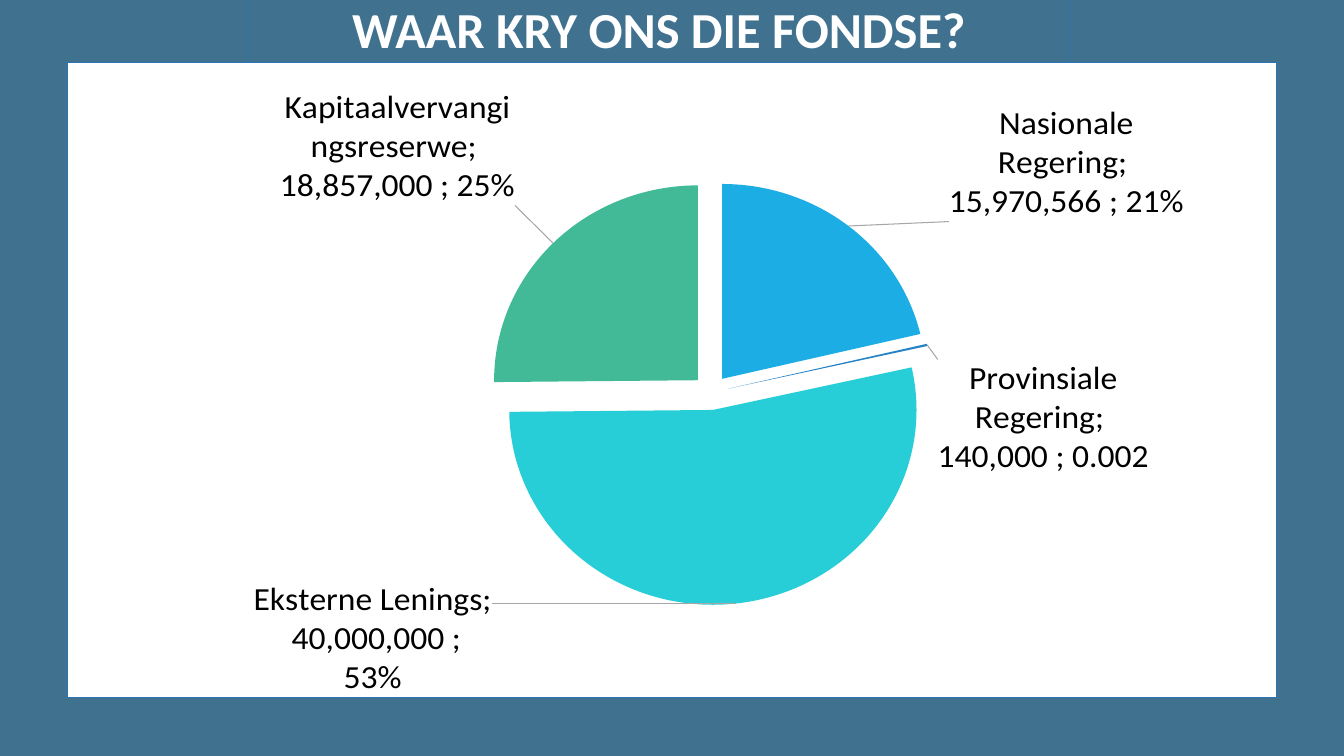
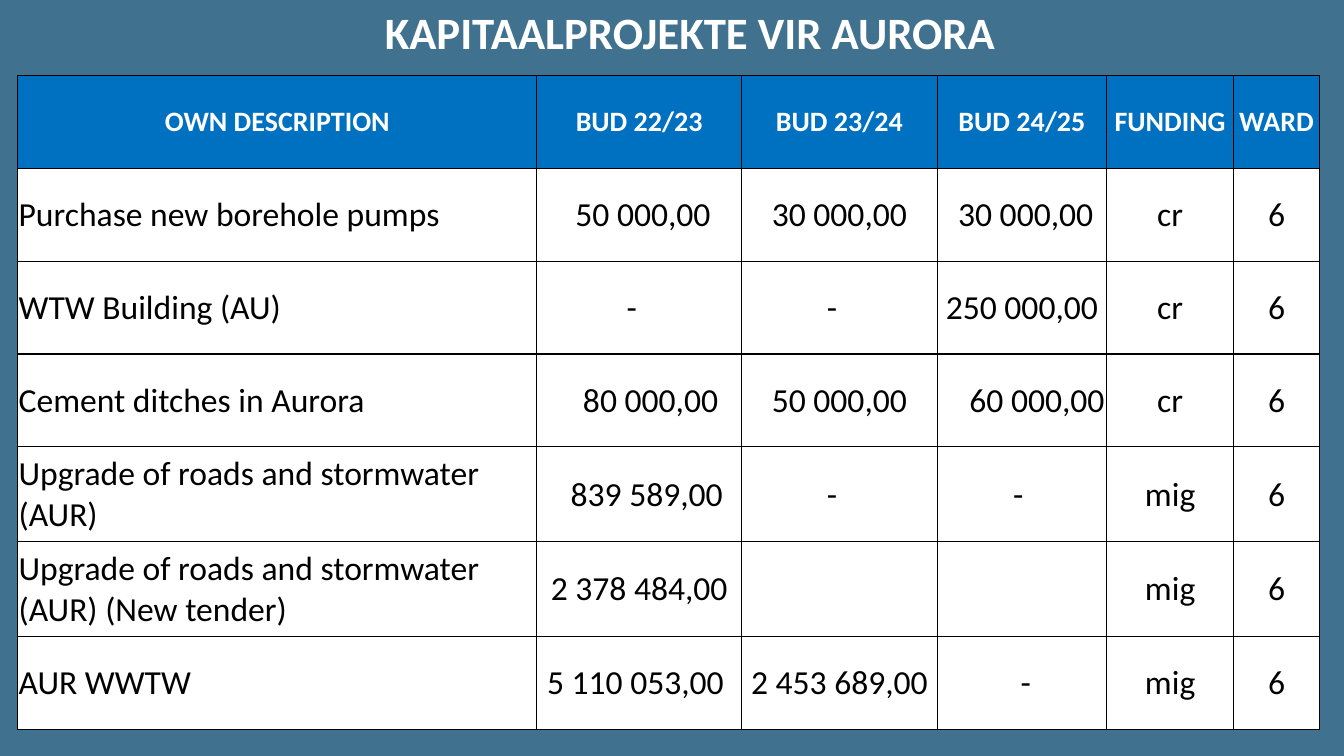
from dataclasses import dataclass
from typing import NamedTuple

from lxml import etree
from pptx import Presentation
from pptx.chart.chart import Chart
from pptx.chart.data import CategoryChartData
from pptx.dml.color import RGBColor
from pptx.enum.chart import XL_CHART_TYPE
from pptx.enum.shapes import MSO_SHAPE
from pptx.enum.text import MSO_ANCHOR, MSO_AUTO_SIZE, PP_ALIGN
from pptx.oxml import parse_xml
from pptx.oxml.ns import nsdecls, qn
from pptx.slide import Slide
from pptx.table import _Cell
from pptx.text.text import TextFrame
from pptx.util import Cm, Pt

PIE = XL_CHART_TYPE.PIE
RECTANGLE = MSO_SHAPE.RECTANGLE
MIDDLE, TOP = MSO_ANCHOR.MIDDLE, MSO_ANCHOR.TOP
NO_RESIZE, GROW = MSO_AUTO_SIZE.NONE, MSO_AUTO_SIZE.SHAPE_TO_FIT_TEXT
LEFT, CENTER = PP_ALIGN.LEFT, PP_ALIGN.CENTER


@dataclass(frozen=True)
class Theme:
    font: str = "Calibri"
    background: str = "407290"
    white: str = "FFFFFF"
    black: str = "000000"
    outline: str = "2E75B6"
    leader: str = "A6A6A6"
    header: str = "0070C0"
    body_size: int = 24
    header_size: int = 20
    outline_width: float = 0.75
    grid_width: float = 1


class Box(NamedTuple):
    left: float
    top: float
    width: float
    height: float

    def lengths(self) -> tuple[Cm, ...]:
        return tuple(Cm(value) for value in self)


@dataclass(frozen=True)
class Title:
    text: str
    box: Box
    size: int


@dataclass(frozen=True)
class Slice:
    name: str
    value: int
    color: str
    label_x: float
    label_y: float
    label_format: str = ""


class Entry(NamedTuple):
    text: str
    shift: int = 0


THEME = Theme()
ACCOUNTING = '_(* #,##0_);_(* \\(#,##0\\);_(* "-"??_);_('
FUNDS_TITLE = Title("WAAR KRY ONS DIE FONDSE?", Box(6.27, 0, 20.68, 2.21), 36)
PROJECTS_TITLE = Title("KAPITAALPROJEKTE VIR AURORA", Box(9.45, 0, 16.03, 1.63), 32)
CHART_BOX = Box(1.7, 1.57, 30.48, 16.74)
PLOT_LAYOUT = {"x": 0.136, "y": 0.185, "w": 0.792, "h": 0.669}
EXPLOSION = 9
SLICES = (
    Slice("Nasionale Regering", 15970566, "1CADE4", 0.08, 0),
    Slice("Provinsiale Regering", 140000, "2683C6", 0.004, 0.21, "0.000"),
    Slice("Eksterne Lenings", 40000000, "27CED7", -0.4, -0.035),
    Slice("Kapitaalvervangingsreserwe", 18857000, "42BA97", -0.028, -0.053),
)

TABLE_BOX = Box(0.45, 1.9, 32.77, 16.43)
COLUMN_WIDTHS = (13.08, 5.16, 4.93, 4.27, 3.2, 2.16)
ROW_HEIGHTS = (2.34, 2.34, 2.34, 2.34, 2.39, 2.39, 2.34)
CELL_MARGIN = 0.02
SHIFT_STEP = 0.19
HEADERS = ("OWN DESCRIPTION", "BUD 22/23", "BUD 23/24", "BUD 24/25", "FUNDING", "WARD")
WARD = "6"
PROJECTS = (
    ("Purchase new borehole pumps",
     (Entry("50 000,00", 1), Entry("30 000,00"), Entry("30 000,00", 1)), "cr"),
    ("WTW Building (AU)",
     (Entry("-", -2), Entry("-", -2), Entry("250 000,00")), "cr"),
    ("Cement ditches in Aurora",
     (Entry("80 000,00", 3), Entry("50 000,00"), Entry("60 000,00", 4)), "cr"),
    ("Upgrade of roads and stormwater (AUR)",
     (Entry("839 589,00", 2), Entry("-", -2), Entry("-", -1)), "mig"),
    ("Upgrade of roads and stormwater (AUR) (New tender)",
     (Entry("2 378 484,00"), Entry(""), Entry("")), "mig"),
    ("AUR WWTW",
     (Entry("5 110 053,00", -1), Entry("2 453 689,00"), Entry("-", 1)), "mig"),
)


def rgb(color: str) -> RGBColor:
    return RGBColor.from_string(color)


def write(frame: TextFrame, text: str, size: int, color: str, bold: bool, alignment: PP_ALIGN) -> None:
    paragraph = frame.paragraphs[0]
    paragraph.text = text
    paragraph.alignment = alignment
    font = paragraph.font
    font.name, font.size, font.bold = THEME.font, Pt(size), bold
    font.color.rgb = rgb(color)


def write_title(frame: TextFrame, title: Title, alignment: PP_ALIGN) -> None:
    frame.vertical_anchor = TOP
    write(frame, title.text, title.size, THEME.white, True, alignment)


def draw_framed_title(slide: Slide, title: Title) -> None:
    shape = slide.shapes.add_shape(RECTANGLE, *title.box.lengths())
    shape.shadow.inherit = False
    shape.fill.background()
    shape.line.color.rgb = rgb(THEME.outline)
    shape.line.width = Pt(THEME.outline_width)
    frame = shape.text_frame
    frame.word_wrap, frame.auto_size = True, NO_RESIZE
    write_title(frame, title, CENTER)
    frame.paragraphs[0].line_spacing = 0.9


def draw_plain_title(slide: Slide, title: Title) -> None:
    frame = slide.shapes.add_textbox(*title.box.lengths()).text_frame
    frame.word_wrap, frame.auto_size = False, GROW
    write_title(frame, title, LEFT)


def outline_xml(color: str, width: float, tag: str = "a:ln") -> str:
    return (f'<{tag} {nsdecls("a")} w="{Pt(width)}"><a:solidFill>'
            f'<a:srgbClr val="{color}"/></a:solidFill></{tag}>')


def label_xml(index: int, piece: Slice, flags: str) -> str:
    number_format = (f'<c:numFmt formatCode="{piece.label_format}" sourceLinked="0"/>'
                     if piece.label_format else "")
    return (f'<c:dLbl><c:idx val="{index}"/><c:layout><c:manualLayout>'
            f'<c:x val="{piece.label_x}"/><c:y val="{piece.label_y}"/>'
            f'</c:manualLayout></c:layout>{number_format}'
            f'<c:dLblPos val="bestFit"/>{flags}</c:dLbl>')


def add_labels(chart: Chart) -> None:
    shown = {"LegendKey": 0, "Val": 1, "CatName": 1, "SerName": 0, "Percent": 1, "BubbleSize": 0}
    flags = "".join(f'<c:show{name} val="{value}"/>' for name, value in shown.items())
    flags += "<c:separator>; </c:separator>"
    labels = parse_xml(
        f'<c:dLbls {nsdecls("c", "a")}>'
        + "".join(label_xml(index, piece, flags) for index, piece in enumerate(SLICES))
        + '<c:numFmt formatCode="General" sourceLinked="1"/>'
        + f'<c:dLblPos val="bestFit"/>{flags}<c:showLeaderLines val="1"/>'
        + f'<c:leaderLines><c:spPr>{outline_xml(THEME.leader, THEME.outline_width)}</c:spPr>'
        + "</c:leaderLines></c:dLbls>")
    labels.find(qn("c:numFmt")).set("formatCode", ACCOUNTING)
    series = chart.plots[0].series[0]._element
    for existing in series.findall(qn("c:dLbls")):
        series.remove(existing)
    series.find(qn("c:cat")).addprevious(labels)


def set_plot_layout(chart: Chart) -> None:
    plot_area = chart._chartSpace.find(f'.//{qn("c:plotArea")}')
    for existing in plot_area.findall(qn("c:layout")):
        plot_area.remove(existing)
    modes = '<c:layoutTarget val="inner"/><c:xMode val="edge"/><c:yMode val="edge"/>'
    sizes = "".join(f'<c:{key} val="{value}"/>' for key, value in PLOT_LAYOUT.items())
    plot_area.insert(0, parse_xml(
        f'<c:layout {nsdecls("c")}><c:manualLayout>{modes}{sizes}</c:manualLayout></c:layout>'))


def frame_chart(chart: Chart) -> None:
    chart._chartSpace.find(qn("c:chart")).addnext(parse_xml(
        f'<c:spPr {nsdecls("c", "a")}><a:solidFill><a:srgbClr val="{THEME.white}"/></a:solidFill>'
        f'{outline_xml(THEME.outline, THEME.outline_width)}</c:spPr>'))


def draw_funds_chart(slide: Slide) -> None:
    data = CategoryChartData(number_format=ACCOUNTING)
    data.categories = [piece.name for piece in SLICES]
    data.add_series("Series 1", [piece.value for piece in SLICES])
    chart = slide.shapes.add_chart(PIE, *CHART_BOX.lengths(), data).chart
    chart.has_legend = chart.has_title = False
    chart.font.name, chart.font.size = THEME.font, Pt(THEME.body_size)
    chart.font.color.rgb = rgb(THEME.black)
    plot = chart.plots[0]
    plot.vary_by_categories = True
    series = plot.series[0]
    for index, piece in enumerate(SLICES):
        fill = series.points[index].format.fill
        fill.solid()
        fill.fore_color.rgb = rgb(piece.color)
    explosion = etree.Element(qn("c:explosion"), val=str(EXPLOSION))
    series._element.find(qn("c:dPt")).addprevious(explosion)
    add_labels(chart)
    set_plot_layout(chart)
    frame_chart(chart)


def fill_cell(cell: _Cell, entry: Entry, header: bool, alignment: PP_ALIGN) -> None:
    cell.vertical_anchor = MIDDLE
    cell.margin_left = Cm(CELL_MARGIN + SHIFT_STEP * max(entry.shift, 0))
    cell.margin_right = Cm(CELL_MARGIN + SHIFT_STEP * max(-entry.shift, 0))
    cell.margin_top, cell.margin_bottom = Cm(CELL_MARGIN), Cm(0)
    cell.fill.solid()
    cell.fill.fore_color.rgb = rgb(THEME.header if header else THEME.white)
    properties = cell._tc.get_or_add_tcPr()
    for position, side in enumerate("LRTB"):
        properties.insert(position, parse_xml(
            outline_xml(THEME.black, THEME.grid_width, f"a:ln{side}")))
    size = THEME.header_size if header else THEME.body_size
    color = THEME.white if header else THEME.black
    write(cell.text_frame, entry.text, size, color, header, alignment)


def draw_projects_table(slide: Slide) -> None:
    rows = [[Entry(text) for text in HEADERS]]
    rows += [[Entry(name), *budgets, Entry(funding), Entry(WARD)]
             for name, budgets, funding in PROJECTS]
    table = slide.shapes.add_table(len(rows), len(HEADERS), *TABLE_BOX.lengths()).table
    table.horz_banding = False
    for column, width in zip(table.columns, COLUMN_WIDTHS):
        column.width = Cm(width)
    for row, height in zip(table.rows, ROW_HEIGHTS):
        row.height = Cm(height)
    for row_index, row in enumerate(rows):
        for column_index, entry in enumerate(row):
            header = row_index == 0
            alignment = CENTER if header or column_index else LEFT
            fill_cell(table.cell(row_index, column_index), entry, header, alignment)


def main() -> None:
    presentation = Presentation()
    presentation.slide_width, presentation.slide_height = Cm(33.87), Cm(19.05)
    background = presentation.slide_master.background.fill
    background.solid()
    background.fore_color.rgb = rgb(THEME.background)
    blank = presentation.slide_layouts[6]

    funds = presentation.slides.add_slide(blank)
    draw_framed_title(funds, FUNDS_TITLE)
    draw_funds_chart(funds)

    projects = presentation.slides.add_slide(blank)
    draw_plain_title(projects, PROJECTS_TITLE)
    draw_projects_table(projects)

    presentation.save("out.pptx")


if __name__ == "__main__":
    main()
